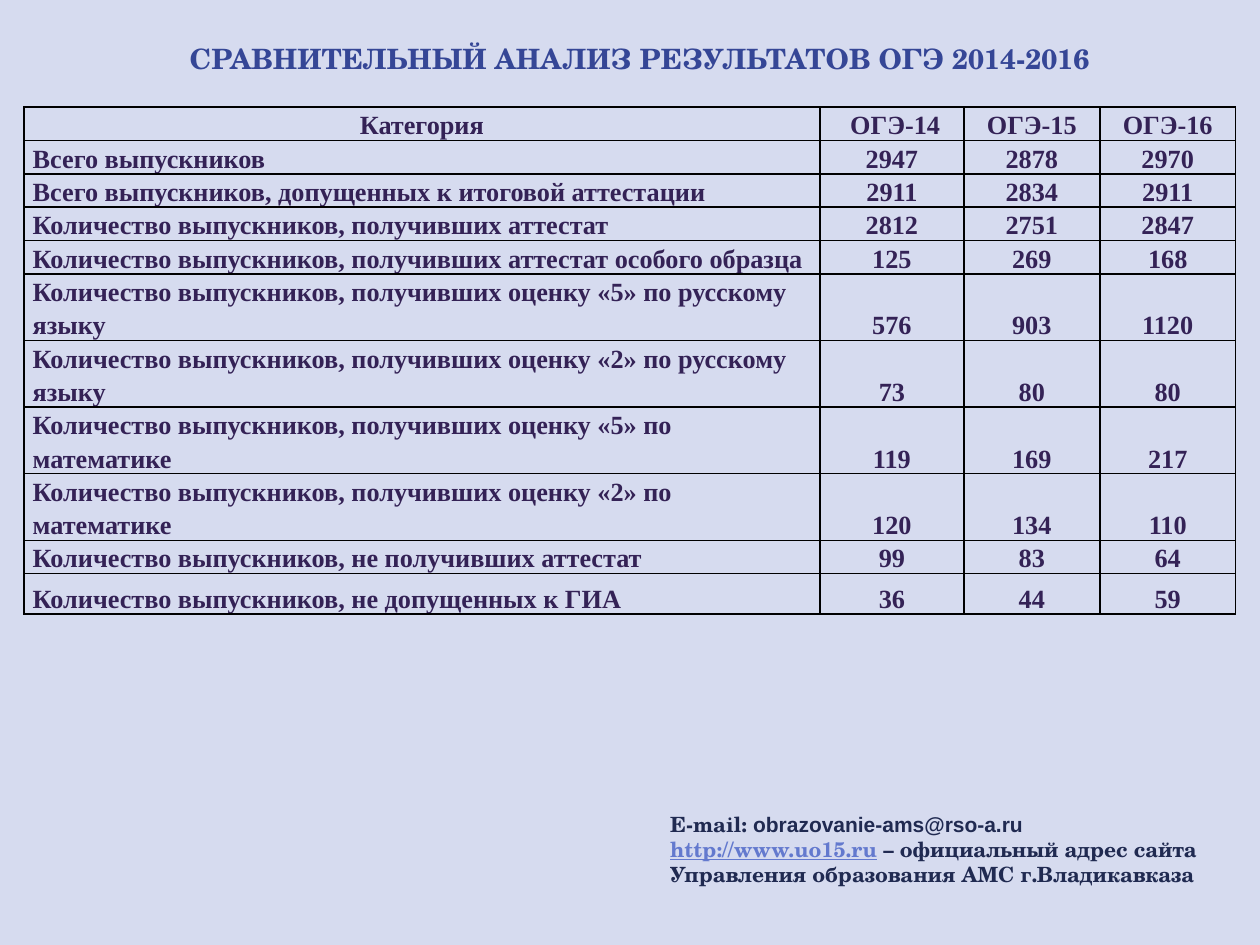
import dataclasses
import typing

import pptx
import pptx.dml.color
import pptx.enum.dml
import pptx.enum.text
import pptx.oxml
import pptx.oxml.ns
import pptx.util

Cm = pptx.util.Cm
Pt = pptx.util.Pt
RGBColor = pptx.dml.color.RGBColor
Align = pptx.enum.text.PP_ALIGN
Anchor = pptx.enum.text.MSO_ANCHOR

BACKGROUND = RGBColor(0xD6, 0xDB, 0xEF)
TABLE_TEXT = RGBColor(0x34, 0x22, 0x56)
CONTACT_TEXT = RGBColor(0x20, 0x2A, 0x51)
ADDRESS_TEXT = RGBColor(0x63, 0x79, 0xCE)
TITLE_TEXT = RGBColor(0x35, 0x46, 0x96)
BORDER = RGBColor(0, 0, 0)
SCHOLA = "TeX Gyre Schola"


@dataclasses.dataclass
class Run:
    text: str
    color: RGBColor
    size: float = 12
    name: str = SCHOLA
    underline: bool = False


@dataclasses.dataclass
class TextBox:
    left: float
    top: float
    width: float
    height: float
    paragraphs: list[list[Run]]
    alignment: Align = Align.LEFT


class Row(typing.NamedTuple):
    category: str
    results: tuple[str, str, str]


TITLE = TextBox(0.71, 0.71, 24.38, 1.63, [
    [Run("СРАВНИТЕЛЬНЫЙ АНАЛИЗ РЕЗУЛЬТАТОВ ОГЭ 2014-2016", TITLE_TEXT, 16)],
], Align.CENTER)
CONTACTS = TextBox(13.26, 16.23, 11.84, 1.8, [
    [Run("E-mail: ", CONTACT_TEXT),
     Run("obrazovanie-ams@rso-a.ru", CONTACT_TEXT, name="Arial")],
    [Run("http://www.uo15.ru", ADDRESS_TEXT, underline=True),
     Run(" – официальный адрес сайта Управления образования АМС г.Владикавказа",
         CONTACT_TEXT)],
])

ROWS = [
    Row("Категория", (" ОГЭ-14", "ОГЭ-15", "ОГЭ-16")),
    Row("Всего выпускников", ("2947", "2878", "2970")),
    Row("Всего выпускников, допущенных к итоговой аттестации", ("2911", "2834", "2911")),
    Row("Количество выпускников, получивших аттестат", ("2812", "2751", "2847")),
    Row("Количество выпускников, получивших аттестат особого образца", ("125", "269", "168")),
    Row("Количество выпускников, получивших оценку «5» по русскому языку", ("576", "903", "1120")),
    Row("Количество выпускников, получивших оценку «2» по русскому языку", ("73", "80", "80")),
    Row("Количество выпускников, получивших оценку «5» по математике", ("119", "169", "217")),
    Row("Количество выпускников, получивших оценку «2» по математике", ("120", "134", "110")),
    Row("Количество выпускников, не получивших аттестат", ("99", "83", "64")),
    Row("Количество выпускников, не допущенных к ГИА", ("36", "44", "59")),
]
COLUMN_WIDTHS = [16.05, 2.9, 2.74, 2.74]
ROW_HEIGHTS = [0.61] * (len(ROWS) - 1) + [0.81]


def set_attributes(target: typing.Any, values: dict[str, typing.Any]) -> None:
    for name, value in values.items():
        setattr(target, name, value)


def add_run(paragraph: typing.Any, content: Run) -> None:
    run = paragraph.add_run()
    run.text = content.text
    set_attributes(run.font, {
        "name": content.name,
        "size": Pt(content.size),
        "bold": True,
        "underline": content.underline,
    })
    run.font.color.rgb = content.color


def add_text_box(slide: typing.Any, box: TextBox) -> None:
    shape = slide.shapes.add_textbox(
        Cm(box.left), Cm(box.top), Cm(box.width), Cm(box.height))
    frame = shape.text_frame
    set_attributes(frame, {
        "word_wrap": True,
        "auto_size": pptx.enum.text.MSO_AUTO_SIZE.SHAPE_TO_FIT_TEXT,
    })
    for index, runs in enumerate(box.paragraphs):
        paragraph = frame.add_paragraph() if index else frame.paragraphs[0]
        paragraph.alignment = box.alignment
        for content in runs:
            add_run(paragraph, content)


def add_borders(cell: typing.Any) -> None:
    properties = cell._tc.get_or_add_tcPr()
    namespace = pptx.oxml.ns.nsdecls("a")
    for index, side in enumerate(("lnL", "lnR", "lnT", "lnB")):
        properties.insert(index, pptx.oxml.parse_xml(
            f'<a:{side} {namespace} w="{Pt(1)}"><a:solidFill>'
            f'<a:srgbClr val="{BORDER}"/></a:solidFill></a:{side}>'))


def fill_cell(cell: typing.Any, text: str, header: bool, centered: bool) -> None:
    margin = Cm(0.15 if header else 0.18)
    set_attributes(cell, {
        "margin_left": margin,
        "margin_right": margin,
        "margin_top": 0,
        "margin_bottom": 0,
        "vertical_anchor": Anchor.MIDDLE if header else Anchor.BOTTOM,
    })
    cell.fill.background()
    add_borders(cell)
    paragraph = cell.text_frame.paragraphs[0]
    set_attributes(paragraph, {
        "alignment": Align.CENTER if centered else Align.LEFT,
        "line_spacing": 1.15,
    })
    add_run(paragraph, Run(text, TABLE_TEXT, 15, "Times New Roman"))


def add_results_table(slide: typing.Any) -> None:
    table = slide.shapes.add_table(
        len(ROWS), len(COLUMN_WIDTHS), Cm(0.48), Cm(2.16),
        Cm(sum(COLUMN_WIDTHS)), Cm(sum(ROW_HEIGHTS))).table
    set_attributes(table, {"first_row": False, "horz_banding": False})
    for column, width in zip(table.columns, COLUMN_WIDTHS):
        column.width = Cm(width)
    for row_index, (row, height) in enumerate(zip(ROWS, ROW_HEIGHTS)):
        table.rows[row_index].height = Cm(height)
        header = row_index == 0
        for column_index, text in enumerate((row.category, *row.results)):
            fill_cell(table.cell(row_index, column_index), text,
                      header, header or column_index > 0)


def main() -> None:
    presentation = pptx.Presentation()
    set_attributes(presentation, {"slide_width": Cm(25.4), "slide_height": Cm(19.05)})
    slide = presentation.slides.add_slide(presentation.slide_layouts[6])
    slide.background.fill.solid()
    slide.background.fill.fore_color.rgb = BACKGROUND
    add_results_table(slide)
    for box in (CONTACTS, TITLE):
        add_text_box(slide, box)
    presentation.save("out.pptx")


if __name__ == "__main__":
    main()
